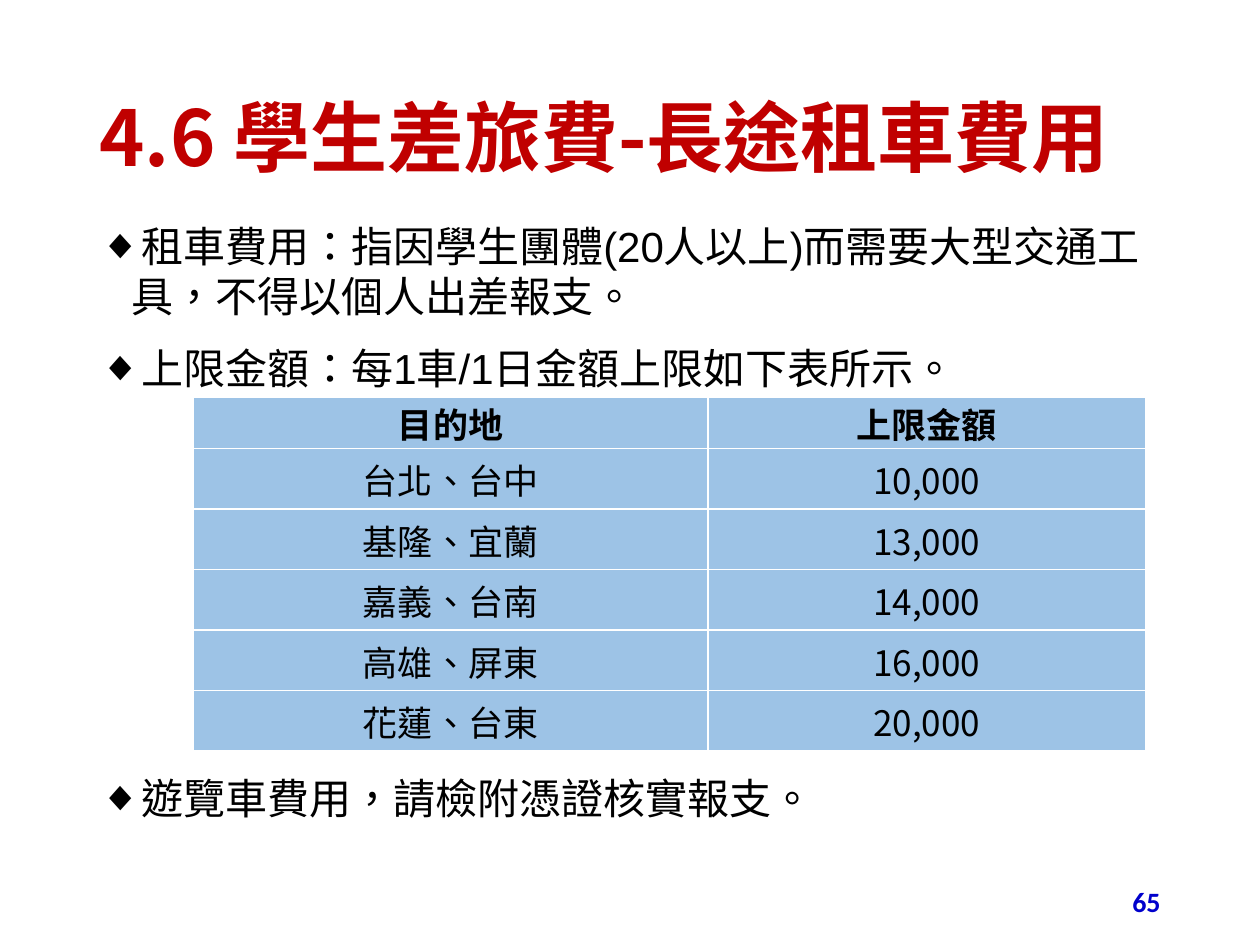
"""Build the slide on the upper limits for long-distance coach hire."""
from dataclasses import dataclass

import pptx
import pptx.dml.color
import pptx.enum.text
import pptx.oxml.ns
import pptx.util
from lxml import etree

Pt = pptx.util.Pt
Inches = pptx.util.Inches
PP_ALIGN = pptx.enum.text.PP_ALIGN
MSO_ANCHOR = pptx.enum.text.MSO_ANCHOR
qn = pptx.oxml.ns.qn
WIDTH, HEIGHT = Inches(10), Inches(7.5)


@dataclass(frozen=True)
class Style:
    size: float
    font: str
    color: str
    bold: bool = False


@dataclass(frozen=True)
class Theme:
    cjk: str = "Noto Sans CJK SC"
    title: Style = Style(44, "Noto Sans CJK SC", "C00000", True)
    body: Style = Style(24, "Arial", "000000")
    header: Style = Style(20, "Noto Sans CJK SC", "000000", True)
    cell: Style = Style(20, "Noto Sans CJK SC", "000000")
    number: Style = Style(16, "Calibri", "0000CC", True)
    cell_fill: str = "9DC3E6"
    border: str = "FFFFFF"


@dataclass(frozen=True)
class Box:
    """Position and size in percent of the slide."""
    left: float
    top: float
    width: float
    height: float

    def emu(self) -> tuple[int, int, int, int]:
        """Return left, top, width and height in EMU."""
        return (int(WIDTH * self.left / 100), int(HEIGHT * self.top / 100),
                int(WIDTH * self.width / 100), int(HEIGHT * self.height / 100))


@dataclass(frozen=True)
class Bullet:
    text: str
    before: float = 6


@dataclass(frozen=True)
class Fare:
    place: str
    limit: str


THEME = Theme()
TITLE_BOX = Box(6.9, 5.33, 86.2, 19.33)
BODY_BOX = Box(6.9, 22.67, 86.2, 63.47)
TABLE_BOX = Box(15.35, 42, 75.6, 37.47)
NUMBER_BOX = Box(70.6, 92.67, 22.5, 5.33)
COLUMN_SHARES = (0.54, 0.46)
HEADER_ROW, FARE_ROW = Inches(0.41), Inches(0.48)
BULLETS = (
    Bullet("租車費用：指因學生團體(20人以上)而需要大型交通工具，不得以個人出差報支。", 0),
    Bullet("上限金額：每1車/1日金額上限如下表所示。"),
    Bullet("遊覽車費用，請檢附憑證核實報支。", 211),
)
FARES = (
    Fare("目的地", "上限金額"),
    Fare("台北、台中", "10,000"),
    Fare("基隆、宜蘭", "13,000"),
    Fare("嘉義、台南", "14,000"),
    Fare("高雄、屏東", "16,000"),
    Fare("花蓮、台東", "20,000"),
)


def rgb(color: str) -> pptx.dml.color.RGBColor:
    """Return a colour from its hex code."""
    return pptx.dml.color.RGBColor.from_string(color)


def format_runs(p, style: Style) -> None:
    """Apply a style to every run of a paragraph."""
    for r in p.runs:
        r.font.size, r.font.bold, r.font.name = Pt(style.size), style.bold, style.font
        r.font.color.rgb = rgb(style.color)
        rPr = r.font._element
        rPr.set("lang", "zh-TW")
        ea = etree.Element(qn("a:ea"), typeface=THEME.cjk)
        rPr.find(qn("a:latin")).addnext(ea)


def place(sp, box: Box) -> None:
    """Move and size a shape."""
    sp.left, sp.top, sp.width, sp.height = box.emu()


def fill_title(sp, text: str) -> None:
    """Fill the title placeholder."""
    place(sp, TITLE_BOX)
    tf = sp.text_frame
    tf.text = text
    tf.auto_size = pptx.enum.text.MSO_AUTO_SIZE.NONE
    tf.vertical_anchor = MSO_ANCHOR.MIDDLE
    p = tf.paragraphs[0]
    p.alignment, p.line_spacing = PP_ALIGN.LEFT, 0.9
    format_runs(p, THEME.title)


def fill_body(sp, bullets: tuple[Bullet, ...]) -> None:
    """Fill the body placeholder with diamond bullets."""
    place(sp, BODY_BOX)
    tf = sp.text_frame
    tf.text = "\n".join(b.text for b in bullets)
    tf.auto_size = pptx.enum.text.MSO_AUTO_SIZE.NONE
    for p, bullet in zip(tf.paragraphs, bullets):
        p.space_before, p.space_after = Pt(bullet.before), Pt(6)
        pPr = p._p.get_or_add_pPr()
        pPr.set("marL", str(Inches(0.25)))
        pPr.set("indent", str(-Inches(0.25)))
        etree.SubElement(pPr, qn("a:buFont"), typeface="Arial")
        etree.SubElement(pPr, qn("a:buChar"), char="◆")
        format_runs(p, THEME.body)


def fill_cell(cell, text: str, style: Style) -> None:
    """Write and format one table cell."""
    cell.text = text
    cell.vertical_anchor = MSO_ANCHOR.MIDDLE
    cell.margin_left = cell.margin_right = cell.margin_top = Inches(0.01)
    cell.margin_bottom = 0
    tcPr = cell._tc.get_or_add_tcPr()
    for side in ("lnL", "lnR", "lnT", "lnB"):
        ln = etree.SubElement(tcPr, qn(f"a:{side}"), w=str(Pt(1)))
        fill = etree.SubElement(ln, qn("a:solidFill"))
        etree.SubElement(fill, qn("a:srgbClr"), val=THEME.border)
    cell.fill.solid()
    cell.fill.fore_color.rgb = rgb(THEME.cell_fill)
    p = cell.text_frame.paragraphs[0]
    p.alignment = PP_ALIGN.CENTER
    format_runs(p, style)


def add_fares(s, fares: tuple[Fare, ...]) -> None:
    """Add the table of destinations and limits."""
    table = s.shapes.add_table(len(fares), len(COLUMN_SHARES), *TABLE_BOX.emu()).table
    for column, share in zip(table.columns, COLUMN_SHARES):
        column.width = int(WIDTH * TABLE_BOX.width / 100 * share)
    for i, fare in enumerate(fares):
        table.rows[i].height = FARE_ROW if i else HEADER_ROW
        for j, text in enumerate((fare.place, fare.limit)):
            fill_cell(table.cell(i, j), text, THEME.cell if i else THEME.header)


def add_number(s, text: str) -> None:
    """Add the page number."""
    tf = s.shapes.add_textbox(*NUMBER_BOX.emu()).text_frame
    tf.word_wrap = True
    tf.vertical_anchor = MSO_ANCHOR.MIDDLE
    tf.text = text
    tf.paragraphs[0].alignment = PP_ALIGN.RIGHT
    format_runs(tf.paragraphs[0], THEME.number)


def main() -> None:
    """Build and save the slide."""
    prs = pptx.Presentation()
    prs.slide_width, prs.slide_height = WIDTH, HEIGHT
    s = prs.slides.add_slide(prs.slide_layouts[1])
    fill_title(s.shapes.title, "4.6 學生差旅費-長途租車費用")
    fill_body(s.placeholders[1], BULLETS)
    add_number(s, "65")
    add_fares(s, FARES)
    prs.save("out.pptx")


if __name__ == "__main__":
    main()
